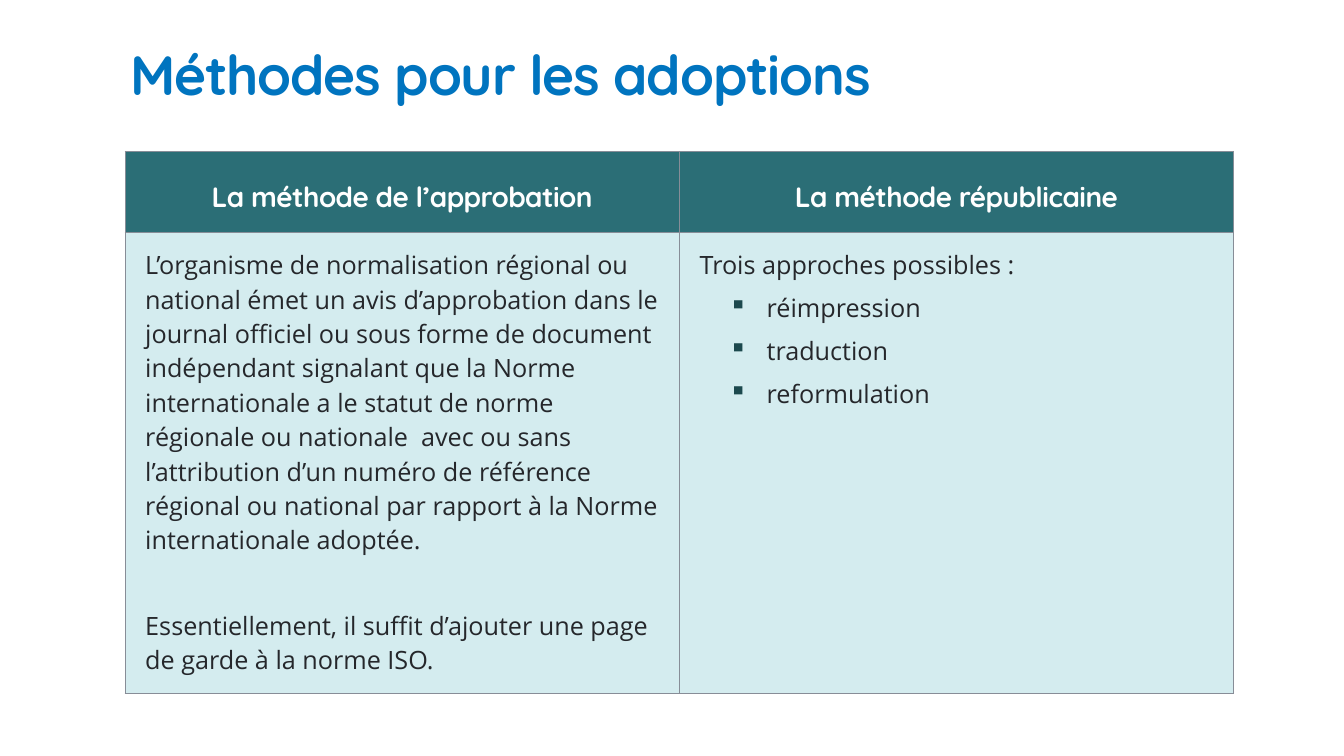
from dataclasses import dataclass

from lxml import etree
from pptx import Presentation
from pptx import util as u
from pptx.dml.color import RGBColor
from pptx.enum import text
from pptx.oxml import ns


@dataclass(frozen=True)
class Theme:
    heading_font: str = "Quicksand"
    body_font: str = "Open Sans"
    title_size: int = 79
    header_size: int = 40
    body_size: int = 36
    title: str = "0074BF"
    header_text: str = "FFFFFF"
    header_fill: str = "2B6E76"
    body_text: str = "25272B"
    body_fill: str = "D4ECEF"
    border: str = "878D97"
    bullet: str = "1C494E"


THEME = Theme()
MARGIN = u.Cm(6.3)
COLUMN_WIDTH = u.Cm(27.94)
ROW_HEIGHTS = [u.Cm(4.11), u.Cm(23.22)]

HEADERS = ["La méthode de l’approbation", "La méthode républicaine"]
# Each body paragraph: wording, bulleted, space before in points
BODIES = [
    [
        ("L’organisme de normalisation régional ou national émet un avis "
         "d’approbation dans le journal officiel ou sous forme de document "
         "indépendant signalant que la Norme internationale a le statut de norme "
         "régionale ou nationale  avec ou sans l’attribution d’un numéro de "
         "référence régional ou national par rapport à la Norme internationale "
         "adoptée.", False, 0),
        ("Essentiellement, il suffit d’ajouter une page de garde à la norme ISO.",
         False, 61),
    ],
    [
        ("Trois approches possibles :", False, 0),
        ("réimpression", True, 0),
        ("traduction", True, 0),
        ("reformulation", True, 0),
    ],
]


def set_font(paragraph, name, size, color, bold=False, tracking=0):
    """Format a whole paragraph; tracking is in points."""
    font = paragraph.font
    font.name, font.size, font.bold = name, u.Pt(size), bold
    font.color.rgb = RGBColor.from_string(color)
    font._rPr.set("spc", str(round(tracking * 100)))


def style_cell(cell, fill):
    """Give a cell its fill and a thin border on all four sides."""
    properties = cell._tc.get_or_add_tcPr()
    for side in ("a:lnL", "a:lnR", "a:lnT", "a:lnB"):
        line = etree.SubElement(properties, ns.qn(side), w=str(u.Pt(1)))
        solid = etree.SubElement(line, ns.qn("a:solidFill"))
        etree.SubElement(solid, ns.qn("a:srgbClr"), val=THEME.border)
    cell.fill.solid()
    cell.fill.fore_color.rgb = RGBColor.from_string(fill)


presentation = Presentation()
presentation.slide_width, presentation.slide_height = u.Cm(67.74), u.Cm(38.1)
slide = presentation.slides.add_slide(presentation.slide_layouts[5])

# Title
title = slide.shapes.title
title.left, title.top = MARGIN, u.Cm(1.24)
title.width, title.height = u.Cm(63.5), u.Cm(4.32)
title.text_frame.text = "Méthodes pour les adoptions"
title.text_frame.auto_size = text.MSO_AUTO_SIZE.NONE
title.text_frame.vertical_anchor = text.MSO_ANCHOR.TOP
paragraph = title.text_frame.paragraphs[0]
paragraph.alignment = text.PP_ALIGN.LEFT
paragraph.line_spacing = 1.2
set_font(paragraph, THEME.heading_font, THEME.title_size, THEME.title, True, -1.6)

# Comparison table
table = slide.shapes.add_table(
    2, 2, MARGIN, u.Cm(7.62), 2 * COLUMN_WIDTH, sum(ROW_HEIGHTS)).table
for row, height in zip(table.rows, ROW_HEIGHTS):
    row.height = height

for column, (header, body) in enumerate(zip(HEADERS, BODIES)):
    table.columns[column].width = COLUMN_WIDTH

    cell = table.cell(0, column)
    style_cell(cell, THEME.header_fill)
    cell.vertical_anchor = text.MSO_ANCHOR.MIDDLE
    cell.text_frame.text = header
    paragraph = cell.text_frame.paragraphs[0]
    paragraph.alignment = text.PP_ALIGN.CENTER
    paragraph.line_spacing = 1.3
    set_font(paragraph, THEME.heading_font, THEME.header_size,
             THEME.header_text, True, -0.7)

    cell = table.cell(1, column)
    style_cell(cell, THEME.body_fill)
    cell.margin_left = cell.margin_right = u.Cm(1.02)
    cell.margin_top, cell.margin_bottom = u.Cm(0.76), u.Cm(0.38)
    cell.text_frame.text = "\n".join(wording for wording, _, _ in body)
    for paragraph, (_, bulleted, space_before) in zip(cell.text_frame.paragraphs, body):
        paragraph.space_before = u.Pt(space_before)
        paragraph.space_after = u.Pt(12)
        if bulleted:
            properties = paragraph._p.get_or_add_pPr()
            properties.set("marL", str(u.Cm(3.38)))
            properties.set("indent", str(u.Cm(-1.9)))
            bullet_color = etree.SubElement(properties, ns.qn("a:buClr"))
            etree.SubElement(bullet_color, ns.qn("a:srgbClr"), val=THEME.bullet)
            etree.SubElement(properties, ns.qn("a:buChar"), char="▪")
        set_font(paragraph, THEME.body_font, THEME.body_size, THEME.body_text)

presentation.save("out.pptx")
